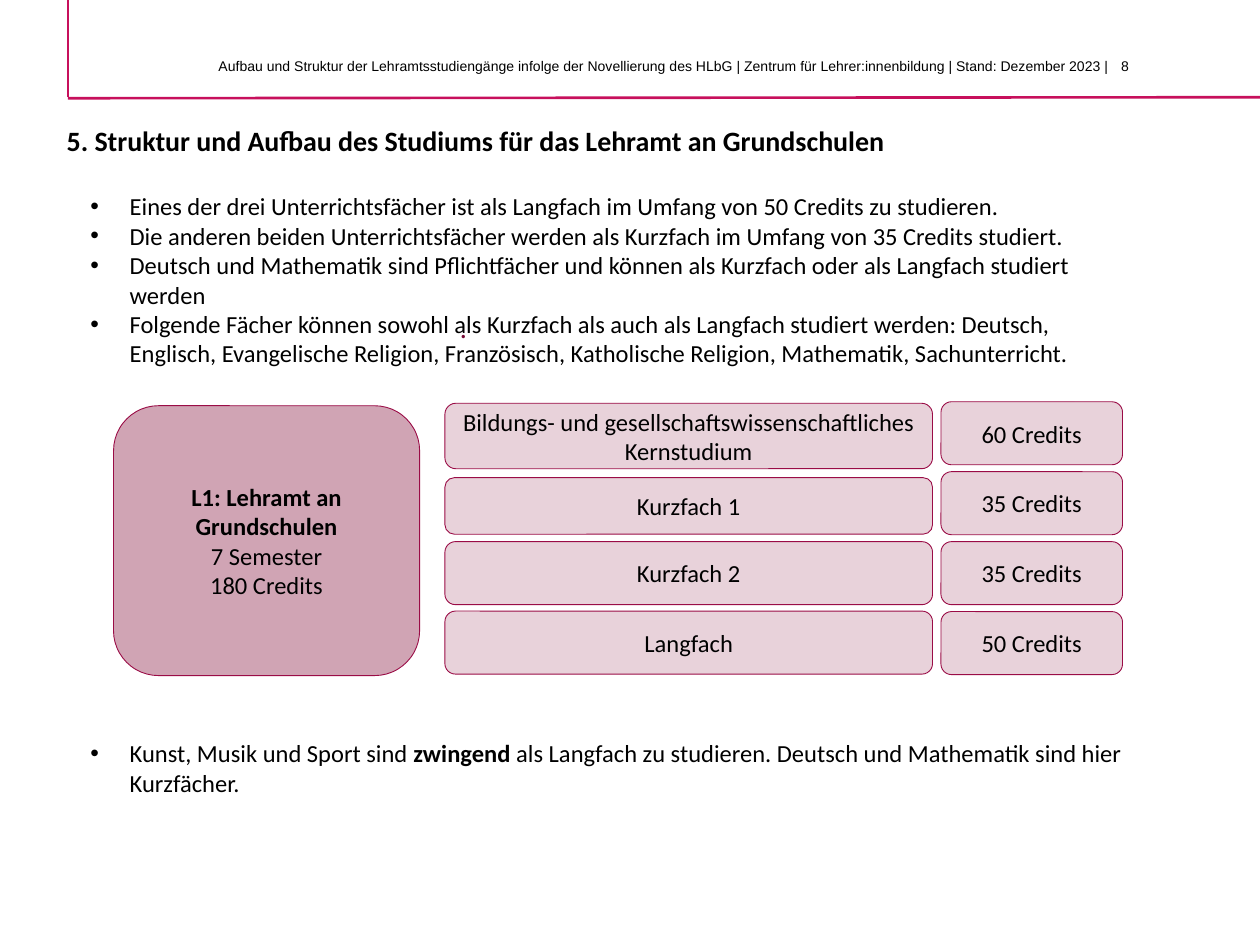
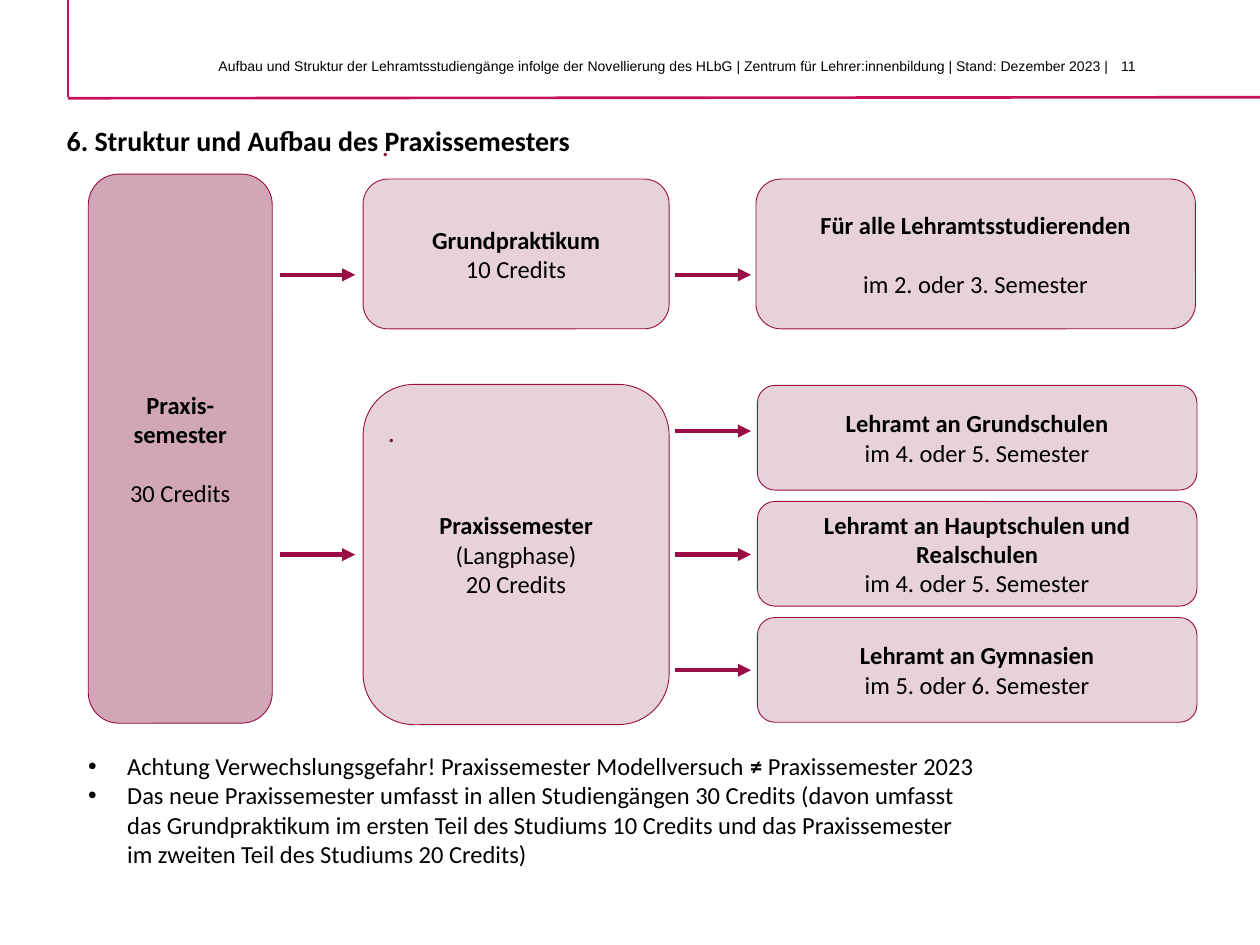
from pptx import Presentation
from pptx import util as u
from pptx.dml.color import RGBColor
from pptx.enum import shapes, text
from pptx.oxml import ns
from lxml import etree

Cm, Pt = u.Cm, u.Pt

# Shared look
BAND = RGBColor(0xC7, 0x10, 0x5C)
WINE = RGBColor(0x9A, 0x0C, 0x46)
DOT = RGBColor(0x74, 0x09, 0x34)
ROSE = RGBColor(0xD0, 0xA4, 0xB4)
PALE = RGBColor(0xE8, 0xD2, 0xDA)
BLACK = RGBColor(0, 0, 0)
BODY_FONT, HEADER_FONT = "Calibri", "Arial"
TITLE_AREA = (1.09, 2.36, 21.54, 0.94)
HEADER_AREA = (3.33, 1.04, 19.3, 0.71)
NUMBER_AREA = (22.35, 1.04, 1.2, 0.71)
HEADER = ("Aufbau und Struktur der Lehramtsstudiengänge infolge der Novellierung des HLbG | "
          "Zentrum für Lehrer:innenbildung | Stand: Dezember 2023 |")
BAND_LINES = [(1.37, 0, 1.37, 1.96), (1.37, 1.98, 25.4, 1.96)]

# Content; ** surrounds bold words, areas are left, top, width, height in cm
PRIMARY = {
    "number": 8,
    "title": "5. Struktur und Aufbau des Studiums für das Lehramt an Grundschulen",
    "lists": [
        ((1.57, 3.73, 21.72, 3.84), [
            "Eines der drei Unterrichtsfächer ist als Langfach im Umfang von 50 Credits zu studieren.",
            "Die anderen beiden Unterrichtsfächer werden als Kurzfach im Umfang von 35 Credits studiert.",
            "Deutsch und Mathematik sind Pflichtfächer und können als Kurzfach oder als Langfach "
            "studiert werden",
            "Folgende Fächer können sowohl als Kurzfach als auch als Langfach studiert werden: "
            "Deutsch, Englisch, Evangelische Religion, Französisch, Katholische Religion, "
            "Mathematik, Sachunterricht.",
        ]),
        ((1.57, 14.76, 21.31, 1.45), [
            "Kunst, Musik und Sport sind **zwingend** als Langfach zu studieren. "
            "Deutsch und Mathematik sind hier Kurzfächer.",
        ]),
    ],
    "dots": [(9.27, 6.27)],
}
DEGREE = ["**L1: Lehramt an Grundschulen**", "7 Semester", "180 Credits"]
SUBJECTS = [  # label, credits, top, height
    ("Bildungs- und gesellschaftswissenschaftliches Kernstudium", 60, 8.13, 1.32),
    ("Kurzfach 1", 35, 9.63, 1.14),
    ("Kurzfach 2", 35, 10.92, 1.27),
    ("Langfach", 50, 12.32, 1.27),
]

INTERNSHIP = {
    "number": 11,
    "title": "6. Struktur und Aufbau des Praxissemesters",
    "lists": [
        ((1.52, 15.01, 18.42, 2.64), [
            "Achtung Verwechslungsgefahr! Praxissemester Modellversuch **≠ **Praxissemester 2023",
            "Das neue Praxissemester umfasst in allen Studiengängen 30 Credits (davon umfasst das "
            "Grundpraktikum im ersten Teil des Studiums 10 Credits und das Praxissemester im "
            "zweiten Teil des Studiums 20 Credits)",
        ]),
    ],
    "dots": [(7.7, 2.59), (7.82, 8.36)],
}
WHOLE = ["**Praxis-semester**", "30 Credits"]
PHASES = [  # lines, top, height
    (["**Grundpraktikum**", "10 Credits"], 3.61, 3.02),
    (["**Praxissemester**", "(Langphase)", "20 Credits"], 7.75, 6.86),
]
EVERYONE = ["**Für alle Lehramtsstudierenden**", "im 2. oder 3. Semester"]
TRACKS = [
    ("Lehramt an Grundschulen", "im 4. oder 5. Semester"),
    ("Lehramt an Hauptschulen und Realschulen", "im 4. oder 5. Semester"),
    ("Lehramt an Gymnasien", "im 5. oder 6. Semester"),
]
ARROW_COLUMNS = [  # from x, to x, heights
    (5.64, 7.16, (5.54, 11.18)),
    (13.61, 15.14, (5.54, 8.69, 11.18, 13.51)),
]


def place(shape, area):
    shape.left, shape.top, shape.width, shape.height = map(Cm, area)


def write(frame, lines, size=14, font=BODY_FONT, color=BLACK, align=text.PP_ALIGN.LEFT,
          bullets=False, gap=0):
    """Fill a frame with one paragraph per line; gap is the space before the last one."""
    frame.word_wrap = True
    frame.auto_size = text.MSO_AUTO_SIZE.NONE
    for i, line in enumerate(lines):
        paragraph = frame.add_paragraph() if i else frame.paragraphs[0]
        if bullets:
            props = paragraph._p.get_or_add_pPr()
            props.set("marL", str(Cm(0.79)))
            props.set("indent", str(-Cm(0.79)))
            etree.SubElement(props, ns.qn("a:buFont"), typeface="Arial")
            etree.SubElement(props, ns.qn("a:buChar"), char="•")
        paragraph.alignment = align
        paragraph.space_before = Pt(gap if i and i == len(lines) - 1 else 0)
        for j, part in enumerate(line.split("**")):
            if part:
                run = paragraph.add_run()
                run.text = part
                run.font.name, run.font.size = font, Pt(size)
                run.font.bold = j % 2 == 1
                run.font.color.rgb = color


def add_label(slide, area, words, **style):
    label = slide.shapes.add_textbox(*map(Cm, area))
    write(label.text_frame, [words], **style)
    return label


def add_line(slide, ends, color, width, arrow=False):
    line = slide.shapes.add_connector(shapes.MSO_CONNECTOR.STRAIGHT, *map(Cm, ends))
    line.line.color.rgb, line.line.width = color, Pt(width)
    props = line._element.spPr
    if arrow:
        etree.SubElement(props.find(ns.qn("a:ln")), ns.qn("a:tailEnd"), type="triangle")
    etree.SubElement(props, ns.qn("a:effectLst"))


def add_box(slide, area, lines, fill=PALE, gap=0):
    box = slide.shapes.add_shape(shapes.MSO_SHAPE.ROUNDED_RECTANGLE, *map(Cm, area))
    box.shadow.inherit = False
    box.fill.solid()
    box.fill.fore_color.rgb = fill
    box.line.color.rgb, box.line.width = WINE, Pt(0.5)
    box.text_frame.vertical_anchor = text.MSO_ANCHOR.MIDDLE
    write(box.text_frame, lines, align=text.PP_ALIGN.CENTER, gap=gap)
    return box


def add_slide(prs, content):
    """Slide with band, header, title and bullet lists."""
    layout = prs.slide_layouts[1 if len(content["lists"]) == 1 else 3]
    slide = prs.slides.add_slide(layout)
    for ends in BAND_LINES:
        add_line(slide, ends, BAND, 1.5)
    add_label(slide, NUMBER_AREA, str(content["number"]), size=8, font=HEADER_FONT)
    add_label(slide, HEADER_AREA, HEADER, size=8, font=HEADER_FONT, align=text.PP_ALIGN.RIGHT)

    title, *bodies = slide.placeholders
    place(title, TITLE_AREA)
    title.text_frame.vertical_anchor = text.MSO_ANCHOR.TOP
    write(title.text_frame, [f"**{content['title']}**"], size=16)
    for body, (area, items) in zip(bodies, content["lists"]):
        place(body, area)
        write(body.text_frame, items, bullets=True)
    return slide


def add_dots(slide, content):
    for left, top in content["dots"]:
        frame = add_label(slide, (left, top, 0.4, 0.7), ".", size=16, color=DOT).text_frame
        frame.margin_left = frame.margin_right = frame.margin_top = frame.margin_bottom = 0


def build_primary(prs):
    slide = add_slide(prs, PRIMARY)
    add_box(slide, (2.29, 8.18, 6.17, 5.44), DEGREE, ROSE)
    for row, (subject, credits, top, height) in enumerate(SUBJECTS):
        add_box(slide, (8.97, top, 9.83, height), [subject])
        add_box(slide, (18.97, 8.1 + 1.41 * row, 3.66, 1.27), [f"{credits} Credits"])
    add_dots(slide, PRIMARY)


def build_internship(prs):
    slide = add_slide(prs, INTERNSHIP)
    whole = add_box(slide, (1.78, 3.51, 3.71, 11.07), WHOLE, ROSE, gap=17)
    fill_color = whole._element.spPr.find(ns.qn("a:solidFill"))[0]
    etree.SubElement(fill_color, ns.qn("a:alpha"), val="97000")
    for lines, top, height in PHASES:
        add_box(slide, (7.32, top, 6.17, height), lines)
    add_box(slide, (15.24, 3.61, 8.86, 3.02), EVERYONE, gap=17)
    for row, (track, semester) in enumerate(TRACKS):
        add_box(slide, (15.27, 7.77 + 2.34 * row, 8.86, 2.11), [f"**{track}**", semester])
    for start, end, heights in ARROW_COLUMNS:
        for y in heights:
            add_line(slide, (start, y, end, y), WINE, 2.5, arrow=True)
    add_dots(slide, INTERNSHIP)


def main():
    prs = Presentation()
    prs.slide_width, prs.slide_height = Cm(25.4), Cm(19.05)
    build_primary(prs)
    build_internship(prs)
    prs.save("out.pptx")


if __name__ == "__main__":
    main()
